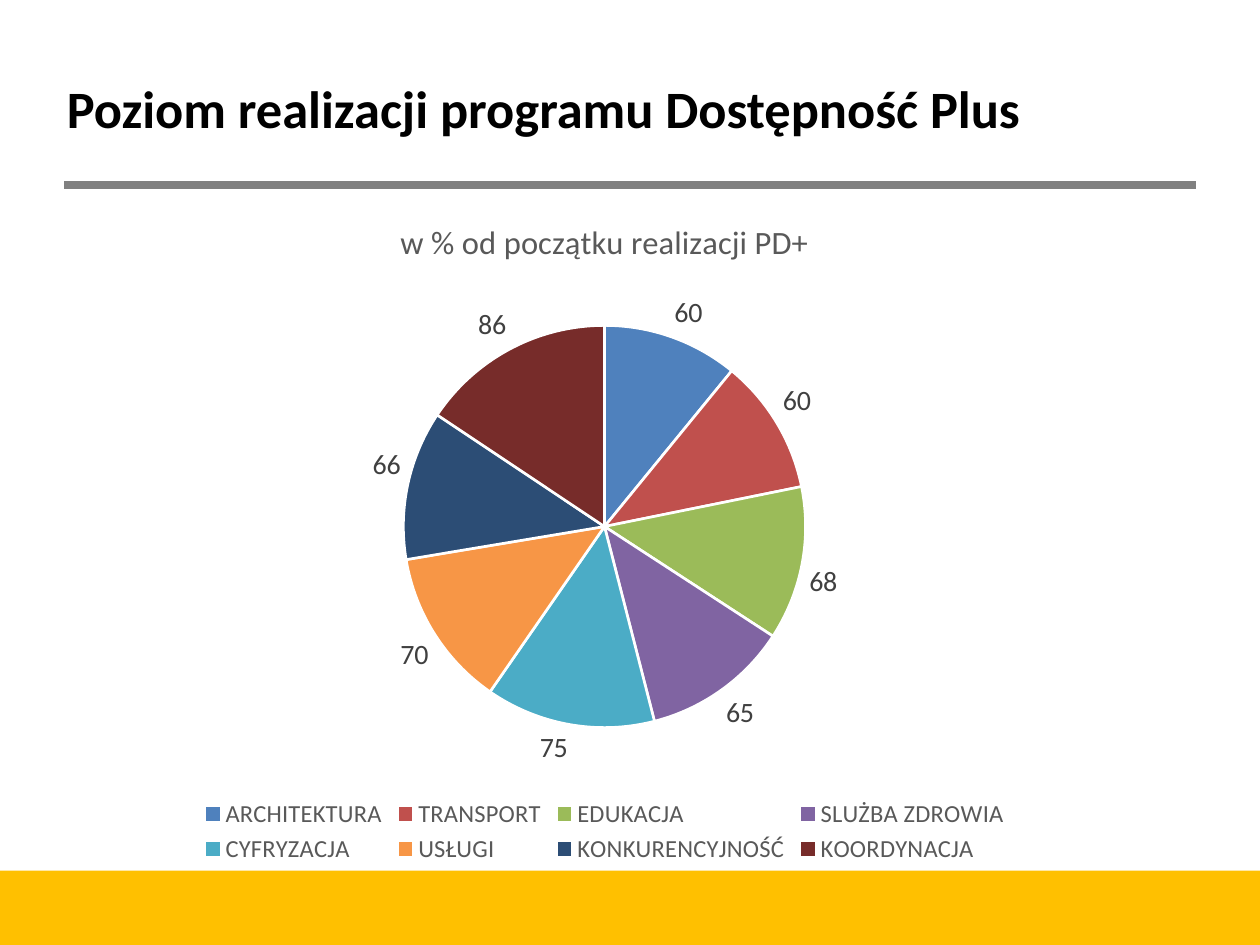
from lxml.etree import SubElement
from pptx import Presentation
from pptx.chart.data import CategoryChartData
from pptx.dml.color import RGBColor
from pptx.enum.chart import XL_CHART_TYPE as ChartType
from pptx.enum.chart import XL_LABEL_POSITION as LabelPosition
from pptx.enum.chart import XL_LEGEND_POSITION as LegendPosition
from pptx.enum.shapes import MSO_CONNECTOR as Connector
from pptx.enum.shapes import MSO_SHAPE as Shape
from pptx.enum.text import MSO_ANCHOR as Anchor
from pptx.enum.text import PP_ALIGN as Align
from pptx.oxml.ns import qn
from pptx.util import Inches, Pt

# Content
TITLE = "Poziom realizacji programu Dostępność Plus"
CHART_TITLE = "w % od początku realizacji PD+"
AREAS = [
    ("ARCHITEKTURA", 60, RGBColor(0x4F, 0x81, 0xBD)),
    ("TRANSPORT", 60, RGBColor(0xC0, 0x50, 0x4D)),
    ("EDUKACJA", 68, RGBColor(0x9B, 0xBB, 0x59)),
    ("SLUŻBA ZDROWIA", 65, RGBColor(0x80, 0x64, 0xA2)),
    ("CYFRYZACJA", 75, RGBColor(0x4B, 0xAC, 0xC6)),
    ("USŁUGI", 70, RGBColor(0xF7, 0x96, 0x46)),
    ("KONKURENCYJNOŚĆ", 66, RGBColor(0x2C, 0x4D, 0x75)),
    ("KOORDYNACJA", 86, RGBColor(0x77, 0x2C, 0x2A)),
]

# Style
FONT = "Calibri"
BLACK = RGBColor(0, 0, 0)
WHITE = RGBColor(0xFF, 0xFF, 0xFF)
AMBER = RGBColor(0xFF, 0xC0, 0x00)
RULE_GREY = RGBColor(0x80, 0x80, 0x80)
TEXT_GREY = RGBColor(0x59, 0x59, 0x59)
LABEL_GREY = RGBColor(0x40, 0x40, 0x40)

# Layout, in inches
WIDTH, HEIGHT = 10, 7.5
MARGIN = 0.51
RULE_TOP = 1.47
BAND_TOP = 6.91
TITLE_BOX = (0.43, 0.55, 8.4, 0.61)
CHART_BOX = (MARGIN, 1.53, 8.58, 5.37)


def inches(values):
    return [Inches(value) for value in values]


def format_font(font, size, color, bold=False):
    values = {"name": FONT, "size": Pt(size), "bold": bold}
    for name, value in values.items():
        setattr(font, name, value)
    font.color.rgb = color


presentation = Presentation()
presentation.slide_width, presentation.slide_height = inches((WIDTH, HEIGHT))
slide = presentation.slides.add_slide(presentation.slide_layouts[5])

# Bottom band
band = slide.shapes.add_shape(
    Shape.RECTANGLE, *inches((0, BAND_TOP, WIDTH, HEIGHT - BAND_TOP)))
band.shadow.inherit = False
band.fill.solid()
band.fill.fore_color.rgb = AMBER
band.line.fill.background()

# Rule under the title
rule = slide.shapes.add_connector(
    Connector.STRAIGHT, *inches((MARGIN, RULE_TOP, WIDTH - MARGIN, RULE_TOP)))
rule.line.color.rgb = RULE_GREY
rule.line.width = Pt(4.5)
SubElement(rule._element.spPr, qn("a:effectLst"))

# Title
title = slide.shapes.title
title.left, title.top, title.width, title.height = inches(TITLE_BOX)
title.text_frame.text = TITLE
title.text_frame.word_wrap = True
title.text_frame.vertical_anchor = Anchor.MIDDLE
paragraph = title.text_frame.paragraphs[0]
paragraph.alignment = Align.LEFT
format_font(paragraph.runs[0].font, 30, BLACK, bold=True)

# Pie chart
data = CategoryChartData()
data.categories = [name for name, _, _ in AREAS]
data.add_series("Series 1", [value for _, value, _ in AREAS])
chart = slide.shapes.add_chart(ChartType.PIE, *inches(CHART_BOX), data).chart
format_font(chart.font, 10, BLACK)

chart.has_title = True
chart.chart_title.include_in_layout = False
chart.chart_title.text_frame.text = CHART_TITLE
heading = chart.chart_title.text_frame.paragraphs[0].runs[0]
format_font(heading.font, 18.6, TEXT_GREY)

chart.has_legend = True
chart.legend.position = LegendPosition.BOTTOM
chart.legend.include_in_layout = False
format_font(chart.legend.font, 14, TEXT_GREY)

plot = chart.plots[0]
plot.vary_by_categories = True
for index, (_, _, color) in enumerate(AREAS):
    slice_format = plot.series[0].points[index].format
    slice_format.fill.solid()
    slice_format.fill.fore_color.rgb = color
    slice_format.line.color.rgb = WHITE
    slice_format.line.width = Pt(1.5)

plot.has_data_labels = True
labels = plot.data_labels
labels.show_value = True
labels.show_percentage = False
labels.position = LabelPosition.OUTSIDE_END
format_font(labels.font, 16, LABEL_GREY)

presentation.save("out.pptx")
